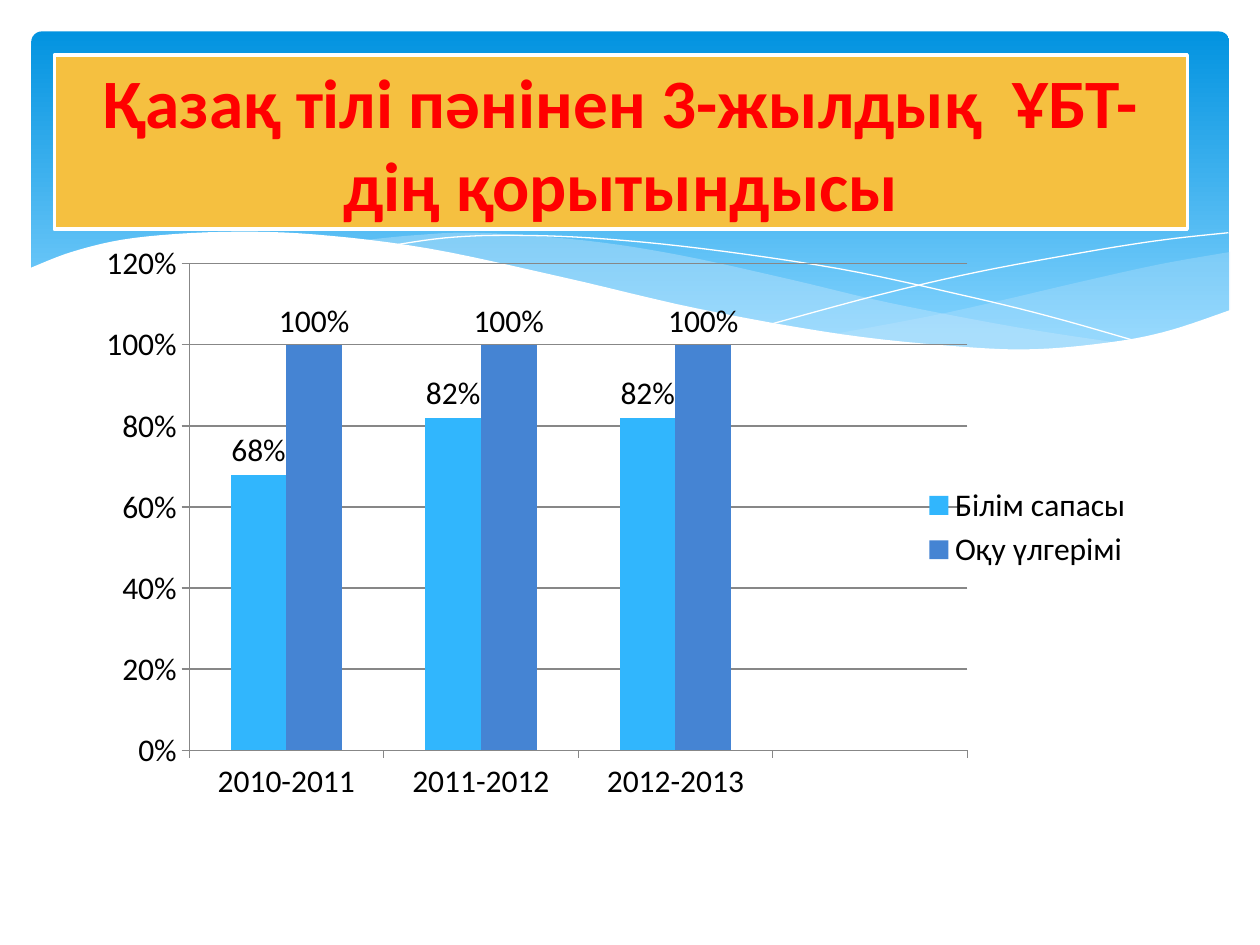
from lxml import etree
from pptx import Presentation
from pptx.chart.data import CategoryChartData
from pptx.dml.color import RGBColor
from pptx.enum.chart import XL_CHART_TYPE, XL_LABEL_POSITION, XL_LEGEND_POSITION, XL_TICK_MARK
from pptx.enum.shapes import MSO_SHAPE
from pptx.enum.text import MSO_ANCHOR, MSO_AUTO_SIZE, PP_ALIGN
from pptx.oxml import parse_xml
from pptx.oxml.ns import nsdecls, qn
from pptx.util import Pt

COLUMNS = XL_CHART_TYPE.COLUMN_CLUSTERED
OUTSIDE_END = XL_LABEL_POSITION.OUTSIDE_END
RIGHT = XL_LEGEND_POSITION.RIGHT
TICK_OUT = XL_TICK_MARK.OUTSIDE
ROUNDED, RECTANGLE = MSO_SHAPE.ROUNDED_RECTANGLE, MSO_SHAPE.RECTANGLE
MIDDLE, CENTER, NO_FIT = MSO_ANCHOR.MIDDLE, PP_ALIGN.CENTER, MSO_AUTO_SIZE.NONE

FONT = "Calibri"
COLORS = {
    "sky_top": "0293E0", "sky_bottom": "83D3FE", "wave": "C6E7FC", "white": "FFFFFF",
    "banner": "F5C040", "title": "FF0000", "text": "000000", "grid": "878787",
    "quality": "31B6FD", "progress": "4584D3",
}
TITLE = "Қазақ тілі пәнінен 3-жылдық  ҰБТ-дің қорытындысы"
TITLE_BOX = (31, 31.5, 647.5, 99.5)
SKY_BOX = (18, 18, 684.5, 194.5)
CHART_BOX = (54, 134, 601, 335)
YEARS = ["2010-2011", "2011-2012", "2012-2013", ""]
SERIES = [
    ("Білім сапасы", (0.68, 0.82, 0.82, None), "quality"),
    ("Оқу үлгерімі", (1, 1, 1, None), "progress"),
]
PLOT_LAYOUT = {"x": 0.09, "y": 0.05, "w": 0.74, "h": 0.83}

RIGHT_WAVE = [
    [(476, 191), (542, 178.5), (620, 160.5), (663, 151), (703, 144)],
    [(703, 178), (668, 189.5), (628, 197.5), (586, 200), (536, 198), (476, 191)],
]
MIDDLE_WAVE = [
    [(643, 196.5), (581, 187), (508, 173), (453, 160), (389.5, 146), (335, 137.5),
     (273.5, 133), (236, 134.5), (206, 137.5)],
    [(206, 137.5), (260.5, 146), (323, 160), (407.5, 178.5), (479, 191.5),
     (538.5, 198.5), (589, 200), (643, 196.5)],
]
FALLING_LINE = [[(222.5, 140.5), (254, 136), (288.5, 134.5), (337.5, 136), (400.5, 142),
                 (479, 153.5), (547, 168), (598.5, 180.5), (653, 196)]]
RISING_LINE = [[(441.5, 185), (500.5, 169), (558.5, 155.5), (623.5, 143.5),
                (665.5, 137), (702, 133)]]
FRONT_WAVE = [
    [(16.5, 153.5), (42.5, 143.5), (76.5, 136), (127.5, 132.5), (180, 134), (245, 142),
     (322, 158.5), (399.5, 176.5), (481, 191), (548, 198), (592.5, 199.5),
     (638.5, 195), (669.5, 188.5), (703.5, 177)],
    [(703.5, 237), (16.5, 237)],
]
WAVES = [
    (RIGHT_WAVE, "wave", 29), (MIDDLE_WAVE, "wave", 40), (FALLING_LINE, None, 100),
    (RISING_LINE, None, 100), (FRONT_WAVE, "white", 100),
]


def rgb(name):
    return RGBColor.from_string(COLORS[name])


def smooth(knots, steps=6):
    """Return points on a Catmull-Rom curve through the knots."""
    if len(knots) < 3:
        return knots
    padded = [knots[0], *knots, knots[-1]]
    curve = [knots[0]]
    for a, b, c, d in zip(padded, padded[1:], padded[2:], padded[3:]):
        for step in range(1, steps + 1):
            t = step / steps
            curve.append(tuple(
                (2 * q + (r - p) * t + (2 * p - 5 * q + 4 * r - s) * t ** 2
                 + (3 * q - p - 3 * r + s) * t ** 3) / 2
                for p, q, r, s in zip(a, b, c, d)))
    return curve


def add_sky(slide):
    sky = slide.shapes.add_shape(ROUNDED, *map(Pt, SKY_BOX))
    sky.adjustments[0] = 0.03
    sky.shadow.inherit = False
    sky.line.fill.background()
    sky.fill.gradient()
    sky.fill.gradient_angle = 270
    for stop, position, color in zip(sky.fill.gradient_stops, (0, 0.9), ("sky_top", "sky_bottom")):
        stop.position = position
        stop.color.rgb = rgb(color)


def add_wave(slide, edges, color, opacity):
    points = [(Pt(x), Pt(y)) for edge in edges for x, y in smooth(edge)]
    builder = slide.shapes.build_freeform(*points[0])
    builder.add_line_segments(points[1:], close=color is not None)
    wave = builder.convert_to_shape()
    wave.shadow.inherit = False
    if color is None:
        wave.fill.background()
        wave.line.color.rgb = rgb("white")
        wave.line.width = Pt(0)
        return
    wave.line.fill.background()
    wave.fill.solid()
    wave.fill.fore_color.rgb = rgb(color)
    if opacity < 100:
        tint = wave.fill._xPr.find(qn("a:solidFill"))[0]
        etree.SubElement(tint, qn("a:alpha")).set("val", str(opacity * 1000))


def add_title(slide):
    title = slide.shapes.title
    title.left, title.top, title.width, title.height = map(Pt, TITLE_BOX)
    title.fill.solid()
    title.fill.fore_color.rgb = rgb("banner")
    title.line.color.rgb = rgb("white")
    title.line.width = Pt(2)
    frame = title.text_frame
    frame.text = TITLE
    frame.word_wrap = True
    frame.auto_size = NO_FIT
    frame.vertical_anchor = MIDDLE
    paragraph = frame.paragraphs[0]
    paragraph.alignment = CENTER
    font = paragraph.runs[0].font
    font.name, font.size, font.bold = FONT, Pt(39.6), True
    font.color.rgb = rgb("title")
    slide.shapes._spTree.append(title._element)


def add_results(slide):
    results = CategoryChartData(number_format="0%")
    results.categories = YEARS
    for name, values, _ in SERIES:
        results.add_series(name, values)
    chart = slide.shapes.add_chart(COLUMNS, *map(Pt, CHART_BOX), results).chart
    chart.has_title = False
    chart.font.name, chart.font.size = FONT, Pt(18)
    chart.font.color.rgb = rgb("text")
    chart.has_legend = True
    chart.legend.position = RIGHT
    chart.legend.include_in_layout = False

    percent = chart.value_axis
    percent.minimum_scale, percent.maximum_scale, percent.major_unit = 0, 1.2, 0.2
    percent.tick_labels.number_format = "0%"
    percent.tick_labels.number_format_is_linked = False
    percent.has_major_gridlines = True
    for axis in (percent, chart.category_axis):
        axis.major_tick_mark = TICK_OUT
    for part in (percent, percent.major_gridlines, chart.category_axis):
        part.format.line.color.rgb = rgb("grid")
        part.format.line.width = Pt(0.75)

    plot = chart.plots[0]
    plot.gap_width, plot.overlap, plot.vary_by_categories = 150, 0, False
    for series, (_, _, color) in zip(plot.series, SERIES):
        series.format.fill.solid()
        series.format.fill.fore_color.rgb = rgb(color)
        labels = series.data_labels
        labels.show_value = True
        labels.number_format, labels.number_format_is_linked = "0%", False
        labels.position = OUTSIDE_END

    area = chart._chartSpace.chart.plotArea
    for layout in area.findall(qn("c:layout")):
        area.remove(layout)
    sizes = "".join(f'<c:{key} val="{value}"/>' for key, value in PLOT_LAYOUT.items())
    area.insert(0, parse_xml(
        f'<c:layout {nsdecls("c")}><c:manualLayout><c:layoutTarget val="inner"/>'
        f'<c:xMode val="edge"/><c:yMode val="edge"/>{sizes}</c:manualLayout></c:layout>'))


def main():
    deck = Presentation()
    deck.slide_width, deck.slide_height = Pt(720), Pt(540)
    slide = deck.slides.add_slide(deck.slide_layouts[5])
    add_sky(slide)
    for edges, color, opacity in WAVES:
        add_wave(slide, edges, color, opacity)
    add_title(slide)
    add_results(slide)
    deck.save("out.pptx")


if __name__ == "__main__":
    main()
